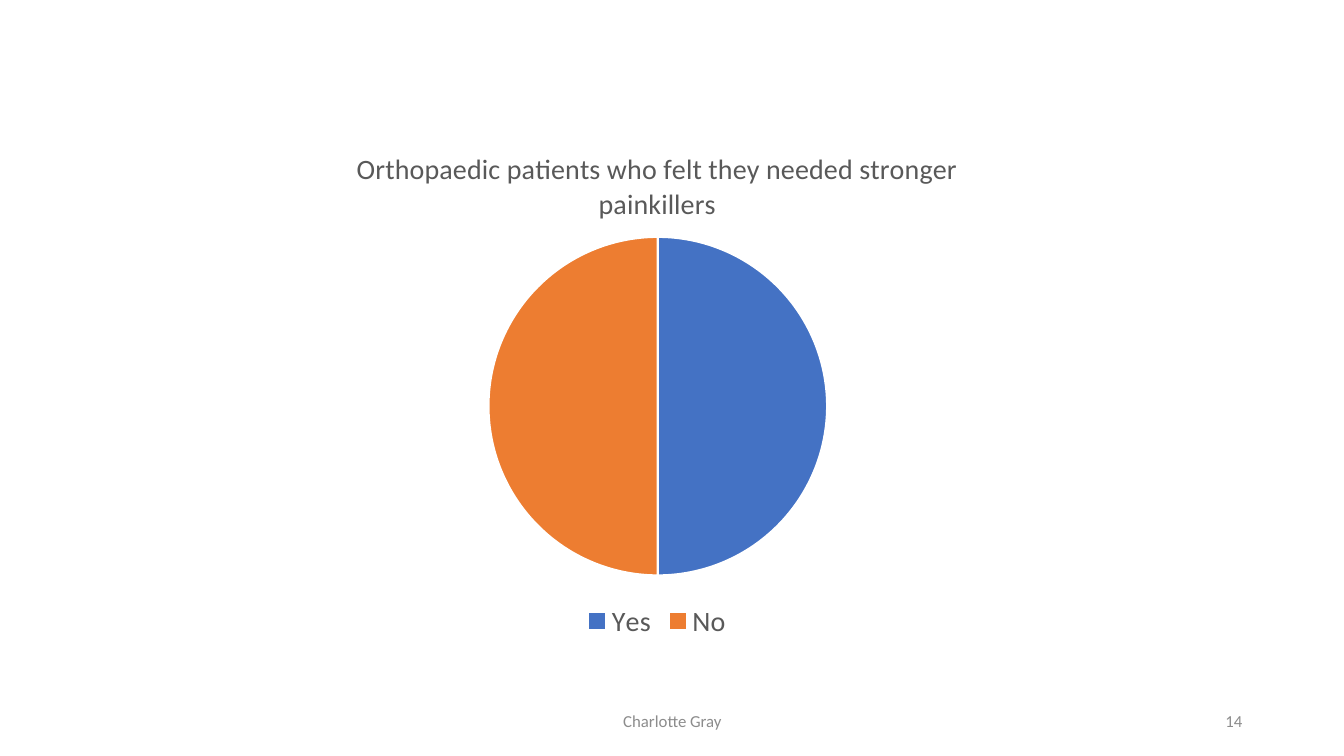
from lxml.etree import SubElement
from pptx import Presentation
from pptx.chart.data import CategoryChartData
from pptx.dml.color import RGBColor
from pptx.enum.chart import XL_CHART_TYPE, XL_LEGEND_POSITION
from pptx.enum.text import MSO_ANCHOR, PP_ALIGN
from pptx.oxml.ns import qn
from pptx.util import Pt

PX = 9144
FACE = "Calibri"
BLUE = RGBColor(0x44, 0x72, 0xC4)
ORANGE = RGBColor(0xED, 0x7D, 0x31)
DARK = RGBColor(0x59, 0x59, 0x59)
GREY = RGBColor(0x8C, 0x8C, 0x8C)
WHITE = RGBColor(0xFF, 0xFF, 0xFF)


def scale(box):
    """Turn a box in px into EMU."""
    return [side * PX for side in box]


def style(font, size, color):
    """Set face, size and colour of a font."""
    font.name = FACE
    font.size = Pt(size)
    font.bold = False
    font.color.rgb = color


def place_plot(chart, box, plot):
    """Fix the pie at the plot box, given in px within the chart box."""
    area = chart.element.find(".//" + qn("c:plotArea"))
    for old in area.findall(qn("c:layout")):
        area.remove(old)
    layout = SubElement(area, qn("c:layout"))
    area.insert(0, layout)
    manual = SubElement(layout, qn("c:manualLayout"))
    parts = [round(side / box[2 + i % 2], 3) for i, side in enumerate(plot)]
    rules = [("layoutTarget", "inner"), ("xMode", "edge"), ("yMode", "edge")]
    for tag, value in rules + list(zip("xywh", parts)):
        SubElement(manual, qn("c:" + tag)).set("val", str(value))


def add_pie(slide, box):
    """Draw the titled pie with its legend in the box."""
    data = CategoryChartData()
    data.categories = ["Yes", "No"]
    data.add_series("Series 1", [50, 50])
    frame = slide.shapes.add_chart(XL_CHART_TYPE.PIE, *scale(box), data)
    chart = frame.chart
    style(chart.font, 10, DARK)
    chart.has_title = True
    run = chart.chart_title.text_frame.paragraphs[0].add_run()
    run.text = "Orthopaedic patients who felt they needed stronger painkillers"
    style(run.font, 20, DARK)
    chart.chart_title.include_in_layout = False
    chart.has_legend = True
    chart.legend.position = XL_LEGEND_POSITION.BOTTOM
    chart.legend.include_in_layout = False
    style(chart.legend.font, 20, DARK)
    pie = chart.plots[0]
    pie.vary_by_categories = True
    for i, color in enumerate([BLUE, ORANGE]):
        form = pie.series[0].points[i].format
        form.fill.solid()
        form.fill.fore_color.rgb = color
        form.line.color.rgb = WHITE
        form.line.width = Pt(1.5)
    wide = 336
    place_plot(chart, box, [(box[2] - wide) // 2, 108, wide, wide])


def add_note(slide, box, text, align):
    """Write one small footer text in the box."""
    frame = slide.shapes.add_textbox(*scale(box)).text_frame
    frame.word_wrap = True
    frame.vertical_anchor = MSO_ANCHOR.MIDDLE
    para = frame.paragraphs[0]
    para.alignment = align
    run = para.add_run()
    run.text = text
    style(run.font, 12, GREY)


def add_footer(slide, box):
    """Place the author and the page number along the box."""
    left, top, width, height = box
    name, page = 450, 300
    add_note(slide, (left, top, name, height), "Charlotte Gray", PP_ALIGN.CENTER)
    add_note(slide, (left + width - page, top, page, height), "14", PP_ALIGN.RIGHT)


def main():
    """Build and save the slide."""
    deck = Presentation()
    deck.slide_width, deck.slide_height = scale((1333, 750))
    slide = deck.slides.add_slide(deck.slide_layouts[6])
    add_pie(slide, (213, 127, 878, 512))
    add_footer(slide, (442, 695, 800, 40))
    deck.save("out.pptx")


if __name__ == "__main__":
    main()
